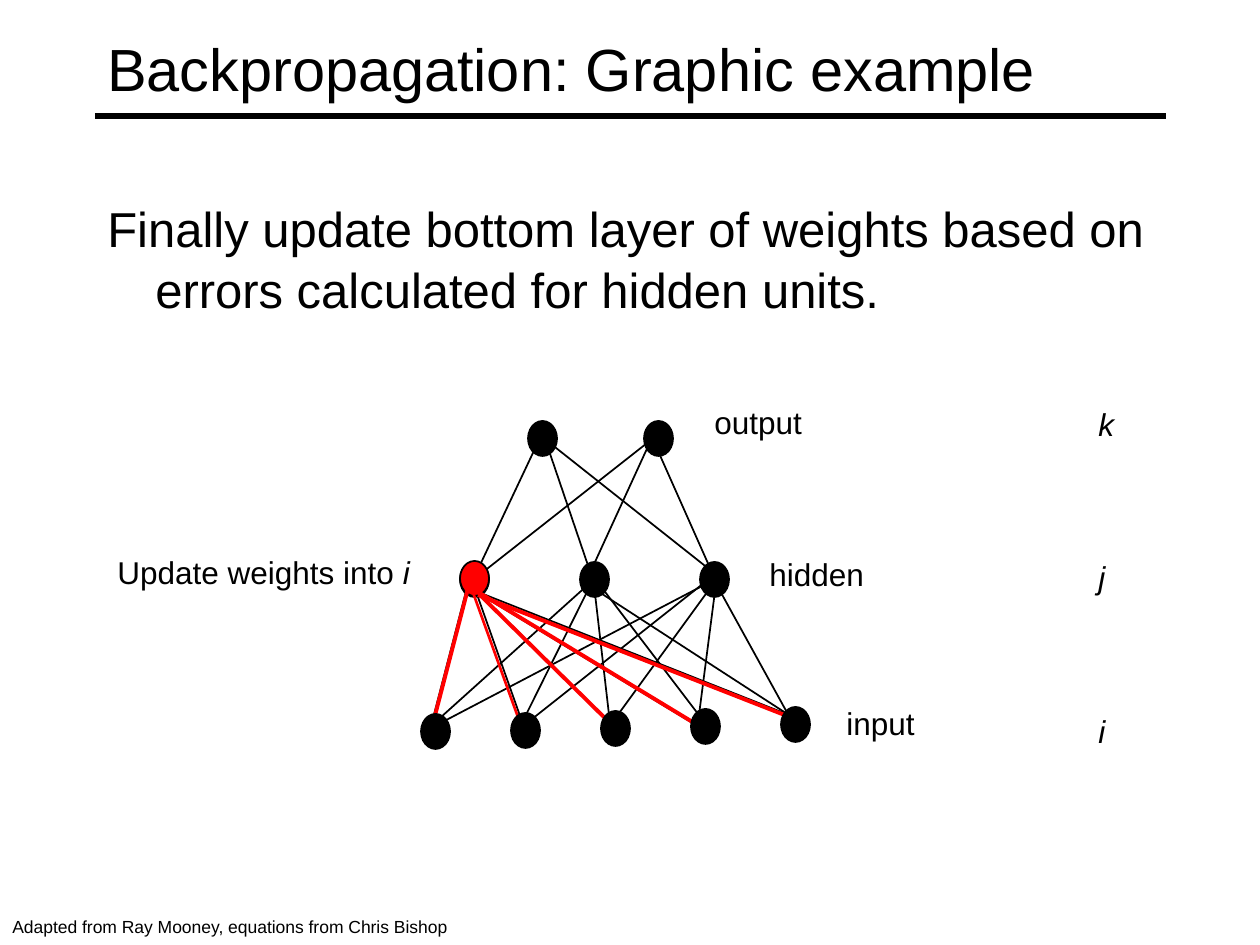
from dataclasses import dataclass

import pptx
import pptx.dml.color
import pptx.enum.shapes
import pptx.enum.text
import pptx.oxml.ns
import pptx.util
from lxml import etree

EMU_PER_PX = 914400 // 126
NODE_WIDTH, NODE_HEIGHT = 29, 35


@dataclass(frozen=True)
class Theme:
    font: str = "Arial"
    ink: str = "000000"
    active: str = "FF0000"
    title: int = 34
    body: int = 28
    label: int = 18
    credit: int = 10
    rule: float = 3
    thin: float = 1
    medium: float = 1.5
    thick: float = 2.25


THEME = Theme()


@dataclass(frozen=True)
class Edge:
    start_x: int
    start_y: int
    end_x: int
    end_y: int
    color: str = THEME.ink
    width: float = THEME.thin


@dataclass(frozen=True)
class Node:
    left: int
    top: int
    color: str = THEME.ink


@dataclass(frozen=True)
class Run:
    text: str
    italic: bool = False


@dataclass(frozen=True)
class TextBlock:
    left: int
    top: int
    width: int
    height: int
    paragraphs: tuple[tuple[Run, ...], ...]
    size: int = THEME.label
    wrap: bool = False
    middle: bool = False
    hanging: int = 0
    space_before: float = 0
    line_spacing: float = 1.0


TITLE_RULE = Edge(95, 116, 1166, 116, width=THEME.rule)

OUTPUT_TO_HIDDEN = [
    Edge(541, 436, 473, 580), Edge(544, 436, 593, 580), Edge(541, 436, 714, 573),
    Edge(651, 440, 473, 580), Edge(651, 440, 590, 573), Edge(655, 444, 711, 570),
]
HIDDEN_TO_INPUT = [
    Edge(469, 580, 430, 730), Edge(473, 583, 524, 727), Edge(473, 587, 606, 719),
    Edge(473, 590, 704, 730), Edge(473, 590, 799, 719),
    Edge(590, 583, 430, 727), Edge(593, 580, 522, 723), Edge(593, 576, 610, 723),
    Edge(596, 580, 708, 727), Edge(596, 590, 795, 719),
    Edge(708, 583, 433, 727), Edge(704, 583, 522, 727), Edge(711, 587, 612, 723),
    Edge(717, 576, 698, 723), Edge(714, 580, 789, 716),
]
UPDATED_WEIGHTS = [
    Edge(470, 581, 431, 731, THEME.active, THEME.thick),
    Edge(471, 587, 523, 731, THEME.active, THEME.medium),
    Edge(480, 595, 614, 727, THEME.active, THEME.thick),
    Edge(478, 592, 709, 732, THEME.active, THEME.thick),
    Edge(478, 595, 805, 723, THEME.active, THEME.thick),
]

OUTPUT_NODES = [Node(left, 421) for left in (528, 644)]
HIDDEN_NODES = [Node(460 + 120 * index, 562) for index in range(3)]
ACTIVE_NODE = Node(460, 561, THEME.active)
# The input row climbs slightly from left to right.
INPUT_NODES = [Node(421 + 90 * index, 714 - 7 * index // 4) for index in range(5)]

TEXT_BLOCKS = [
    TextBlock(95, 10, 1071, 116, ((Run("Backpropagation: Graphic example"),),),
              size=THEME.title, wrap=True, middle=True),
    TextBlock(95, 189, 1071, 154,
              ((Run("Finally update bottom layer of weights based on "
                    "errors calculated for hidden units."),),),
              size=THEME.body, wrap=True, hanging=48, space_before=2, line_spacing=1.05),
    TextBlock(702, 397, 115, 54, ((Run("output"),),)),
    TextBlock(757, 549, 120, 54, ((Run("hidden"),),)),
    TextBlock(834, 698, 97, 54, ((Run("input"),),)),
    TextBlock(105, 547, 320, 52, ((Run("Update weights into "), Run("i", True)),)),
    TextBlock(1086, 399, 42, 357, tuple((Run(letter, True),) for letter in "kji"),
              space_before=66),
    TextBlock(0, 910, 465, 34,
              ((Run("Adapted from Ray Mooney, equations from Chris Bishop"),),),
              size=THEME.credit),
]


def px(length: int) -> pptx.util.Emu:
    return pptx.util.Emu(length * EMU_PER_PX)


def rgb(color: str) -> pptx.dml.color.RGBColor:
    return pptx.dml.color.RGBColor.from_string(color)


def set_attributes(target, values: dict) -> None:
    for name, value in values.items():
        setattr(target, name, value)


def draw_edge(slide, edge: Edge) -> None:
    connector = slide.shapes.add_connector(
        pptx.enum.shapes.MSO_CONNECTOR.STRAIGHT,
        px(edge.start_x), px(edge.start_y), px(edge.end_x), px(edge.end_y))
    connector.line.color.rgb = rgb(edge.color)
    connector.line.width = pptx.util.Pt(edge.width)
    properties = connector.element.find(pptx.oxml.ns.qn("p:spPr"))
    etree.SubElement(properties, pptx.oxml.ns.qn("a:effectLst"))


def draw_node(slide, node: Node) -> None:
    shape = slide.shapes.add_shape(
        pptx.enum.shapes.MSO_SHAPE.OVAL,
        px(node.left), px(node.top), px(NODE_WIDTH), px(NODE_HEIGHT))
    shape.shadow.inherit = False
    shape.fill.solid()
    shape.fill.fore_color.rgb = rgb(node.color)
    shape.line.color.rgb = rgb(THEME.ink)
    shape.line.width = pptx.util.Pt(THEME.thin)


def draw_text(slide, block: TextBlock) -> None:
    frame = slide.shapes.add_textbox(
        px(block.left), px(block.top), px(block.width), px(block.height)).text_frame
    anchors = pptx.enum.text.MSO_ANCHOR
    sizing = pptx.enum.text.MSO_AUTO_SIZE
    set_attributes(frame, {
        "word_wrap": block.wrap,
        "auto_size": sizing.NONE if block.wrap else sizing.SHAPE_TO_FIT_TEXT,
        "vertical_anchor": anchors.MIDDLE if block.middle else anchors.TOP,
    })
    for index, runs in enumerate(block.paragraphs):
        paragraph = frame.add_paragraph() if index else frame.paragraphs[0]
        paragraph.line_spacing = block.line_spacing
        if index or block.wrap:
            paragraph.space_before = pptx.util.Pt(block.space_before)
        if block.hanging:
            properties = paragraph._p.get_or_add_pPr()
            properties.set("marL", str(px(block.hanging)))
            properties.set("indent", str(-px(block.hanging)))
        for run in runs:
            text_run = paragraph.add_run()
            text_run.text = run.text
            set_attributes(text_run.font, {
                "name": THEME.font,
                "size": pptx.util.Pt(block.size),
                "italic": run.italic,
            })
            text_run.font.color.rgb = rgb(THEME.ink)


def main() -> None:
    presentation = pptx.Presentation()
    presentation.slide_width, presentation.slide_height = px(1260), px(945)
    slide = presentation.slides.add_slide(presentation.slide_layouts[6])
    for edge in [TITLE_RULE, *OUTPUT_TO_HIDDEN, *HIDDEN_TO_INPUT]:
        draw_edge(slide, edge)
    for node in [*HIDDEN_NODES, ACTIVE_NODE, *OUTPUT_NODES]:
        draw_node(slide, node)
    for edge in UPDATED_WEIGHTS:
        draw_edge(slide, edge)
    for node in INPUT_NODES:
        draw_node(slide, node)
    for block in TEXT_BLOCKS:
        draw_text(slide, block)
    presentation.save("out.pptx")


if __name__ == "__main__":
    main()
